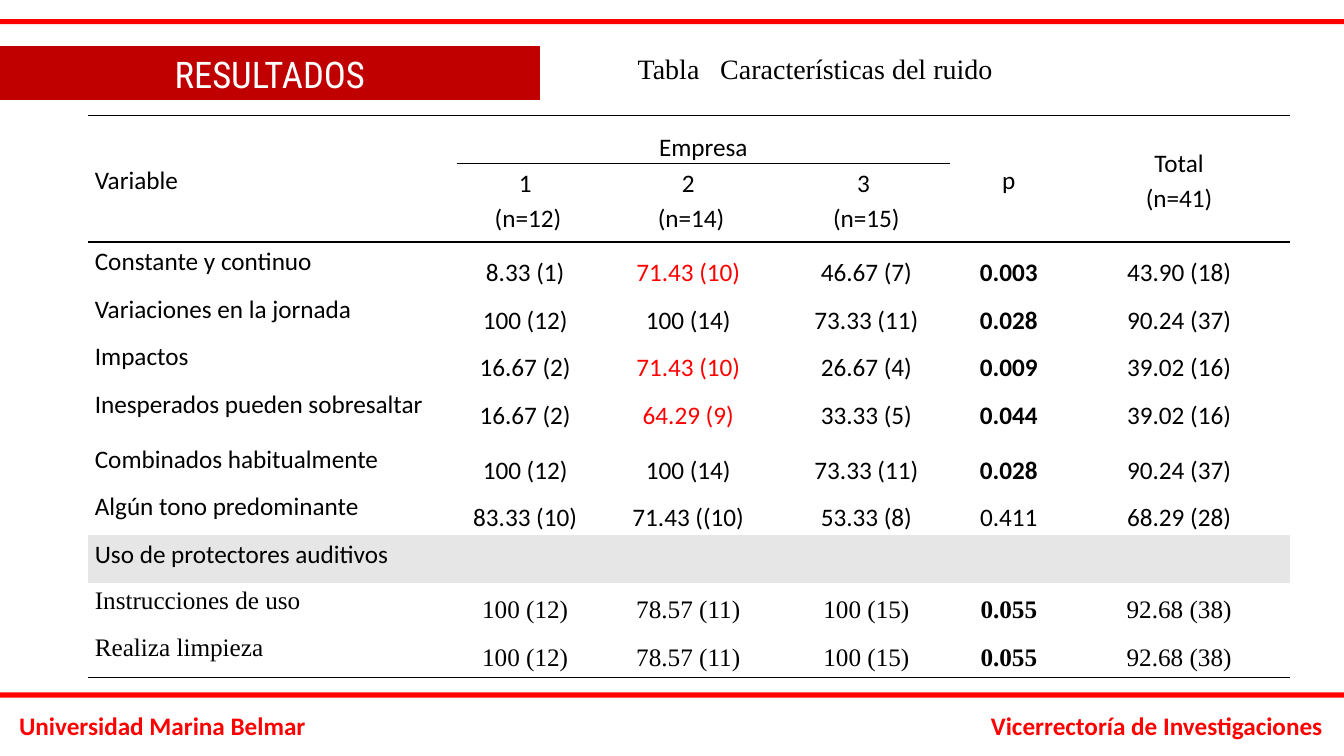
from lxml import etree
from pptx import Presentation
from pptx.dml.color import RGBColor
from pptx.enum.shapes import MSO_SHAPE
from pptx.enum.text import MSO_ANCHOR, MSO_AUTO_SIZE, PP_ALIGN
from pptx.oxml.ns import qn
from pptx.util import Cm, Pt

LEFT, CENTER, RIGHT = PP_ALIGN.LEFT, PP_ALIGN.CENTER, PP_ALIGN.RIGHT
TOP, MIDDLE, BOTTOM = MSO_ANCHOR.TOP, MSO_ANCHOR.MIDDLE, MSO_ANCHOR.BOTTOM
RECTANGLE, NO_FIT = MSO_SHAPE.RECTANGLE, MSO_AUTO_SIZE.NONE
RED, DARK_RED, BLACK, WHITE, GREY = "FF0000", "C00000", "000000", "FFFFFF", "E7E6E6"
SANS, SERIF, CONDENSED = "Calibri", "Times New Roman", "Roboto Condensed"

TITLE = "RESULTADOS"
CAPTION = "Tabla\tCaracterísticas del ruido"
CAPTION_TAB = 2.08
FOOTERS = [
    ("Universidad Marina Belmar", 0.23, 8.31, LEFT),
    ("Vicerrectoría de Investigaciones", 22.73, 10.85, RIGHT),
]
BAR_TOPS = [0.48, 17.45]
ROWS = [
    ["Variable", "Empresa", "", "", "p", "Total\n(n=41)"],
    ["", "1\n (n=12)", "2\n (n=14)", "3 \n(n=15)", "", ""],
    ["Constante y continuo", "8.33 (1)", "71.43 (10)", "46.67 (7)", "0.003", "43.90 (18)"],
    ["Variaciones en la jornada", "100 (12)", "100 (14)", "73.33 (11)", "0.028", "90.24 (37)"],
    ["Impactos", "16.67 (2)", "71.43 (10)", "26.67 (4)", "0.009", "39.02 (16)"],
    ["Inesperados pueden sobresaltar", "16.67 (2)", "64.29 (9)", "33.33 (5)", "0.044", "39.02 (16)"],
    ["Combinados habitualmente", "100 (12)", "100 (14)", "73.33 (11)", "0.028", "90.24 (37)"],
    ["Algún tono predominante", "83.33 (10)", "71.43 ((10)", "53.33 (8)", "0.411", "68.29 (28)"],
    ["Uso de protectores auditivos", "", "", "", "", ""],
    ["Instrucciones de uso", "100 (12)", "78.57 (11)", "100 (15)", "0.055", "92.68 (38)"],
    ["Realiza limpieza", "100 (12)", "78.57 (11)", "100 (15)", "0.055", "92.68 (38)"],
]
MERGES = [((0, 0), (1, 0)), ((0, 1), (0, 3)), ((0, 4), (1, 4)), ((0, 5), (1, 5))]
HEADER_ROWS, SECTION_ROW, P_COLUMN = 2, 8, 4
HIGHLIGHTS = {(2, 2), (4, 2), (5, 2)}
NOT_SIGNIFICANT = "0.411"
RULES = {0: range(6), 1: range(1, 4), 2: range(6), len(ROWS): range(6)}
COLUMN_WIDTHS = [9.3, 3.45, 4.77, 4.21, 2.97, 5.61]
ROW_HEIGHT, SPECIAL_HEIGHTS = 1.2, {1: 1.98, 5: 1.38}


def color(value):
    return RGBColor.from_string(value)


def write(frame, text, size, font, ink, align=LEFT, bold=False, spacing=None):
    frame.text = text
    for paragraph in frame.paragraphs:
        paragraph.alignment = align
        paragraph.line_spacing = spacing
        for span in paragraph.runs:
            span.font.size = Pt(size)
            span.font.name = font
            span.font.bold = bold
            span.font.color.rgb = color(ink)


def add_text(page, text, left, top, width, height, *style, **options):
    box = page.shapes.add_textbox(Cm(left), Cm(top), Cm(width), Cm(height))
    box.text_frame.word_wrap = True
    write(box.text_frame, text, *style, **options)
    return box


def add_bar(page, top):
    bar = page.shapes.add_shape(RECTANGLE, 0, Cm(top), Cm(33.87), Cm(0.13))
    bar.shadow.inherit = False
    bar.fill.solid()
    bar.fill.fore_color.rgb = color(RED)
    bar.line.fill.background()


def format_title(title):
    title.left, title.top, title.width, title.height = Cm(0), Cm(1.17), Cm(13.6), Cm(1.35)
    title.fill.solid()
    title.fill.fore_color.rgb = color(DARK_RED)
    title.line.color.rgb = color(DARK_RED)
    title.line.width = Pt(0.75)
    frame = title.text_frame
    frame.auto_size = NO_FIT
    frame.vertical_anchor = BOTTOM
    frame.margin_left = frame.margin_right = Cm(0.2)
    frame.margin_top = frame.margin_bottom = Cm(0.1)
    write(frame, TITLE, 26.2, CONDENSED, WHITE, CENTER, spacing=0.9)


def set_borders(cell, row, column):
    properties = cell._tc.get_or_add_tcPr()
    ruled = {
        "a:lnT": column in RULES.get(row, ()),
        "a:lnB": column in RULES.get(row + 1, ()),
    }
    for position, side in enumerate(("a:lnL", "a:lnR", "a:lnT", "a:lnB")):
        border = etree.Element(qn(side), w=str(Pt(1)))
        properties.insert(position, border)
        if ruled.get(side):
            fill = etree.SubElement(border, qn("a:solidFill"))
            etree.SubElement(fill, qn("a:srgbClr"), val=BLACK)
        else:
            etree.SubElement(border, qn("a:noFill"))


def format_cell(cell, row, column, text):
    cell.margin_left = cell.margin_right = Cm(0.18)
    cell.margin_top = cell.margin_bottom = 0
    cell.vertical_anchor = MIDDLE if row == 0 else TOP
    if row == SECTION_ROW:
        cell.fill.solid()
        cell.fill.fore_color.rgb = color(GREY)
    else:
        cell.fill.background()
    set_borders(cell, row, column)
    if text:
        is_value = row >= HEADER_ROWS and column > 0
        write(
            cell.text_frame,
            text,
            18,
            SERIF if row > SECTION_ROW else SANS,
            RED if (row, column) in HIGHLIGHTS else BLACK,
            CENTER if column else LEFT,
            bold=is_value and column == P_COLUMN and text != NOT_SIGNIFICANT,
            spacing=1.5 if is_value or text == "Empresa" else 1.15,
        )


def add_results(page):
    heights = [SPECIAL_HEIGHTS.get(row, ROW_HEIGHT) for row in range(len(ROWS))]
    frame = page.shapes.add_table(
        len(ROWS), len(COLUMN_WIDTHS), Cm(2.21), Cm(2.92),
        Cm(sum(COLUMN_WIDTHS)), Cm(sum(heights)),
    )
    table = frame.table
    table.first_row = table.horz_banding = False
    for column, width in zip(table.columns, COLUMN_WIDTHS):
        column.width = Cm(width)
    for row, height in zip(table.rows, heights):
        row.height = Cm(height)
    for first, last in MERGES:
        table.cell(*first).merge(table.cell(*last))
    for row, texts in enumerate(ROWS):
        for column, text in enumerate(texts):
            format_cell(table.cell(row, column), row, column, text)


def add_caption(page):
    caption = add_text(page, CAPTION, 15.82, 1.17, 9.8, 1.12, 20, SERIF, BLACK)
    properties = caption.text_frame.paragraphs[0]._p.get_or_add_pPr()
    tabs = etree.SubElement(properties, qn("a:tabLst"))
    etree.SubElement(tabs, qn("a:tab"), pos=str(Cm(CAPTION_TAB)), algn="l")


def main():
    deck = Presentation()
    deck.slide_width, deck.slide_height = Cm(33.87), Cm(19.05)
    page = deck.slides.add_slide(deck.slide_layouts[5])
    for top in BAR_TOPS:
        add_bar(page, top)
    for text, left, width, align in FOOTERS:
        add_text(page, text, left, 17.78, width, 1.02, 18, SANS, RED, align, bold=True)
    format_title(page.shapes.title)
    add_results(page)
    add_caption(page)
    deck.save("out.pptx")


if __name__ == "__main__":
    main()
